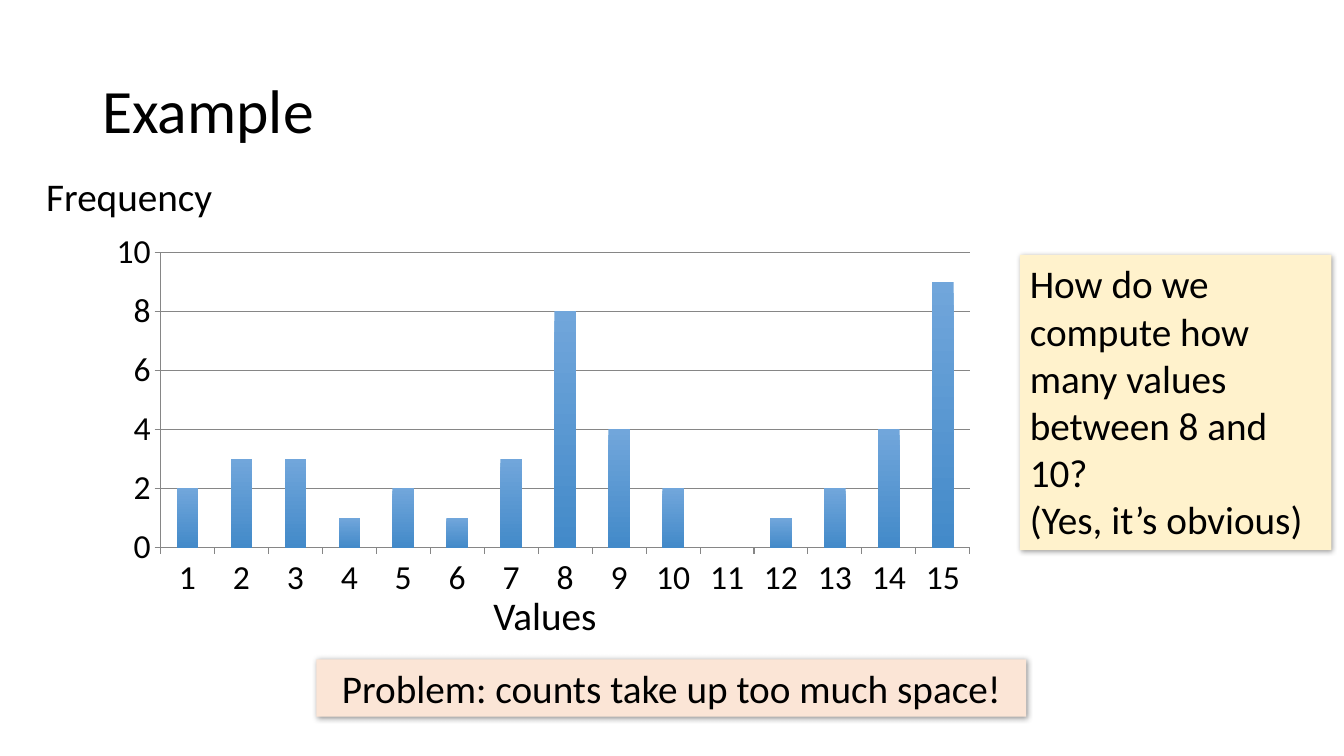
"""Build the frequency histogram example slide."""
import pptx
import pptx.util
import pptx.chart.data
import pptx.dml.color
import pptx.enum.chart
import pptx.enum.shapes
import pptx.enum.text
import pptx.oxml
import pptx.oxml.ns

Pt = pptx.util.Pt
RGBColor = pptx.dml.color.RGBColor
ALIGN = pptx.enum.text.PP_ALIGN
ANCHOR = pptx.enum.text.MSO_ANCHOR
AUTO_SIZE = pptx.enum.text.MSO_AUTO_SIZE

BLACK = RGBColor(0x00, 0x00, 0x00)
AXIS_GREY = RGBColor(0x86, 0x86, 0x86)
BAR_TOP = RGBColor(0x71, 0xA6, 0xDB)
BAR_BOTTOM = RGBColor(0x43, 0x8A, 0xC9)
PALE_YELLOW = RGBColor(0xFF, 0xF2, 0xCC)
PALE_ORANGE = RGBColor(0xFB, 0xE5, 0xD6)

SHADOW = (
    f'<a:effectLst {pptx.oxml.ns.nsdecls("a")}>'
    '<a:outerShdw blurRad="50800" dist="12700" dir="2700000" algn="tl" rotWithShape="0">'
    '<a:srgbClr val="000000"><a:alpha val="40000"/></a:srgbClr>'
    '</a:outerShdw></a:effectLst>'
)


def write(holder, lines, size, align, **frame_format):
    frame = holder.text_frame
    frame.text = "\n".join(lines)
    for name, value in {"word_wrap": True, **frame_format}.items():
        setattr(frame, name, value)
    for paragraph in frame.paragraphs:
        paragraph.alignment = align
        for name, value in {"name": "Calibri", "size": Pt(size)}.items():
            setattr(paragraph.font, name, value)
        paragraph.font.color.rgb = BLACK


deck = pptx.Presentation()
deck.slide_width = Pt(960)
deck.slide_height = Pt(540)
slide = deck.slides.add_slide(deck.slide_layouts[6])

frequencies = pptx.chart.data.CategoryChartData()
frequencies.categories = [str(value) for value in range(1, 16)]
frequencies.add_series("Series 1", (2, 3, 3, 1, 2, 1, 3, 8, 4, 2, 0, 1, 2, 4, 9))
histogram = slide.shapes.add_chart(
    pptx.enum.chart.XL_CHART_TYPE.COLUMN_CLUSTERED,
    Pt(70.5), Pt(160), Pt(635), Pt(273), frequencies,
).chart
for name, value in {"has_legend": False, "has_title": False}.items():
    setattr(histogram, name, value)
for name, value in {"name": "Calibri", "size": Pt(10)}.items():
    setattr(histogram.font, name, value)
histogram.font.color.rgb = BLACK

columns = histogram.plots[0]
for name, value in {"gap_width": 150, "vary_by_categories": False}.items():
    setattr(columns, name, value)
bar_fill = columns.series[0].format.fill
bar_fill.gradient()
bar_fill.gradient_angle = 270
for stop, colour in zip(bar_fill.gradient_stops, (BAR_TOP, BAR_BOTTOM)):
    stop.color.rgb = colour

counts = histogram.value_axis
scale = {"minimum_scale": 0, "maximum_scale": 10, "major_unit": 2, "has_major_gridlines": True}
for name, value in scale.items():
    setattr(counts, name, value)
for axis in (histogram.category_axis, counts):
    axis.major_tick_mark = pptx.enum.chart.XL_TICK_MARK.OUTSIDE
    axis.tick_labels.font.size = Pt(24)
for ruled in (histogram.category_axis, counts, counts.major_gridlines):
    ruled.format.line.color.rgb = AXIS_GREY
    ruled.format.line.width = Pt(0.75)

for label, left, top, width in (("Values", 250, 419, 278.5), ("Frequency", 0, 119.5, 184.5)):
    axis_label = slide.shapes.add_textbox(Pt(left), Pt(top), Pt(width), Pt(41))
    write(axis_label, [label], 28, ALIGN.CENTER, auto_size=AUTO_SIZE.SHAPE_TO_FIT_TEXT)

question = ["How do we compute how many values between 8 and 10?", "(Yes, it’s obvious)"]
problem = ["Problem: counts take up too much space!"]
for lines, left, top, width, height, colour, align in (
    (question, 728.5, 182, 222.5, 211, PALE_YELLOW, ALIGN.LEFT),
    (problem, 226, 471, 507, 41, PALE_ORANGE, ALIGN.CENTER),
):
    callout = slide.shapes.add_shape(
        pptx.enum.shapes.MSO_SHAPE.RECTANGLE, Pt(left), Pt(top), Pt(width), Pt(height)
    )
    callout.fill.solid()
    callout.fill.fore_color.rgb = colour
    callout.line.fill.background()
    callout._element.spPr.append(pptx.oxml.parse_xml(SHADOW))
    write(callout, lines, 28, align,
          vertical_anchor=ANCHOR.TOP, auto_size=AUTO_SIZE.SHAPE_TO_FIT_TEXT)

title = slide.shapes.add_textbox(Pt(66), Pt(28.75), Pt(828), Pt(104.5))
write(title, ["Example"], 44, ALIGN.LEFT, vertical_anchor=ANCHOR.MIDDLE)
title.text_frame.paragraphs[0].line_spacing = 0.9

deck.save("out.pptx")
